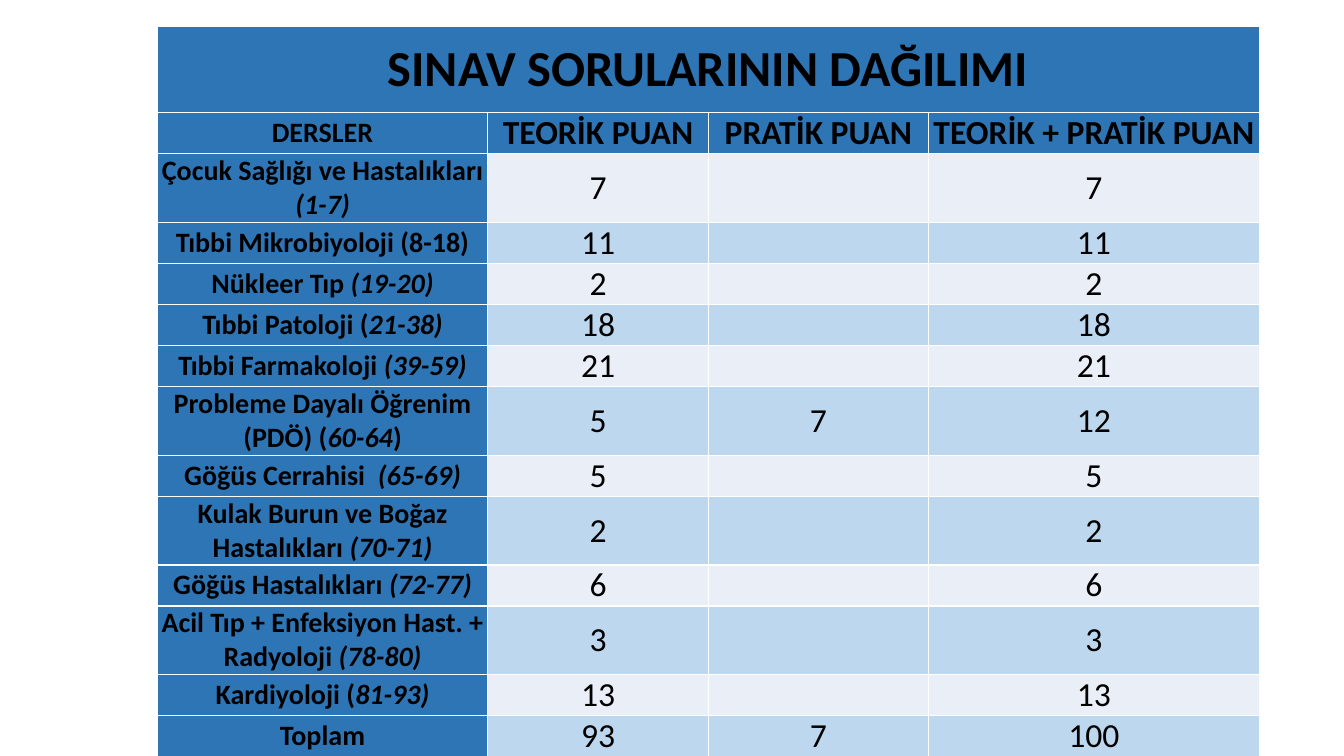
import dataclasses
import typing

import lxml.etree
import pptx
import pptx.dml.color
import pptx.enum.text
import pptx.oxml.ns
import pptx.util

WIDE, HIGH = 13.33, 7.5
LEFT, TOP, SPAN, TALL = 1.56, 0.26, 10.93, 7.13
SHARES = (0.3, 0.2, 0.2, 0.3)
HEAD, ONE, TWO = 0.86, 0.35, 0.61
BLUE, PALE, SKY = "2E75B6", "EAEFF7", "BDD7EE"
BLACK, WHITE = "000000", "FFFFFF"


@dataclasses.dataclass
class Course:
    name: str
    slant: str
    theory: int
    lab: int = 0
    tail: str = ""
    high: float = ONE


COURSES = [
    Course("Çocuk Sağlığı ve Hastalıkları ", "(1-7)", 7, high=0.59),
    Course("Tıbbi Mikrobiyoloji (8-18)", "", 11),
    Course("Nükleer Tıp ", "(19-20)", 2),
    Course("Tıbbi Patoloji (", "21-38)", 18),
    Course("Tıbbi Farmakoloji ", "(39-59)", 21),
    Course("Probleme Dayalı Öğrenim (PDÖ) (", "60-64", 5, 7, ")", TWO),
    Course("Göğüs Cerrahisi  ", "(65-69)", 5),
    Course("Kulak Burun ve Boğaz Hastalıkları ", "(70-71)", 2, high=TWO),
    Course("Göğüs Hastalıkları ", "(72-77)", 6),
    Course("Acil Tıp + Enfeksiyon Hast. + Radyoloji ", "(78-80)", 3, high=TWO),
    Course("Kardiyoloji (", "81-93)", 13),
]
TOTAL = Course("Toplam", "", sum(c.theory for c in COURSES), sum(c.lab for c in COURSES))
LABELS = ("DERSLER", "TEORİK PUAN", "PRATİK PUAN", "TEORİK + PRATİK PUAN")


def tint(code: str) -> pptx.dml.color.RGBColor:
    return pptx.dml.color.RGBColor.from_string(code)


def apply(item: typing.Any, form: dict[str, typing.Any]) -> None:
    for key, value in form.items():
        setattr(item, key, value)


def edge(cell: typing.Any) -> None:
    """Draw a thin white line on all four sides."""
    props = cell._tc.get_or_add_tcPr()
    name = pptx.oxml.ns.qn
    for spot, side in enumerate(("lnL", "lnR", "lnT", "lnB")):
        line = lxml.etree.Element(name(f"a:{side}"), w=str(pptx.util.Pt(1)))
        fill = lxml.etree.SubElement(line, name("a:solidFill"))
        lxml.etree.SubElement(fill, name("a:srgbClr"), val=WHITE)
        props.insert(spot, line)


def write(cell: typing.Any, parts: tuple[str, ...], back: str, size: int, bold: bool) -> None:
    """Fill a cell; every second part is in italics."""
    apply(cell, dict(margin_left=0, margin_right=0, margin_top=0, margin_bottom=0,
                     vertical_anchor=pptx.enum.text.MSO_ANCHOR.MIDDLE))
    cell.fill.solid()
    cell.fill.fore_color.rgb = tint(back)
    edge(cell)
    para = cell.text_frame.paragraphs[0]
    para.alignment = pptx.enum.text.PP_ALIGN.CENTER
    para.font.size = pptx.util.Pt(size)
    for spot, text in enumerate(parts):
        if text:
            run = para.add_run()
            run.text = text
            apply(run.font, dict(name="Calibri", size=pptx.util.Pt(size),
                                 bold=bold, italic=spot % 2 == 1))
            run.font.color.rgb = tint(BLACK)


def build() -> None:
    deck = pptx.Presentation()
    apply(deck, dict(slide_width=pptx.util.Inches(WIDE), slide_height=pptx.util.Inches(HIGH)))
    slide = deck.slides.add_slide(deck.slide_layouts[6])

    # Table grid
    rows = [*COURSES, TOTAL]
    sizes = [HEAD, ONE, *(row.high for row in rows)]
    box = [pptx.util.Inches(n) for n in (LEFT, TOP, SPAN, TALL)]
    frame = slide.shapes.add_table(len(sizes), len(SHARES), *box)
    table = frame.table
    for col, share in zip(table.columns, SHARES):
        col.width = pptx.util.Inches(SPAN * share)
    for row, high in zip(table.rows, sizes):
        row.height = pptx.util.Inches(high)
    frame.height = box[3]

    # Title and column heads
    for col, label in enumerate(LABELS):
        title = "" if col else "SINAV SORULARININ DAĞILIMI"
        write(table.cell(0, col), (title,), BLUE, 36, True)
        write(table.cell(1, col), (label,), BLUE, 24 if col else 20, True)
    table.cell(0, 0).merge(table.cell(0, len(LABELS) - 1))

    # Courses and total
    for spot, row in enumerate(rows):
        line = spot + 2
        write(table.cell(line, 0), (row.name, row.slant, row.tail), BLUE, 20, True)
        back = SKY if spot % 2 else PALE
        for col, mark in enumerate((row.theory, row.lab, row.theory + row.lab), 1):
            write(table.cell(line, col), (str(mark or ""),), back, 24, False)

    deck.save("out.pptx")


if __name__ == "__main__":
    build()
